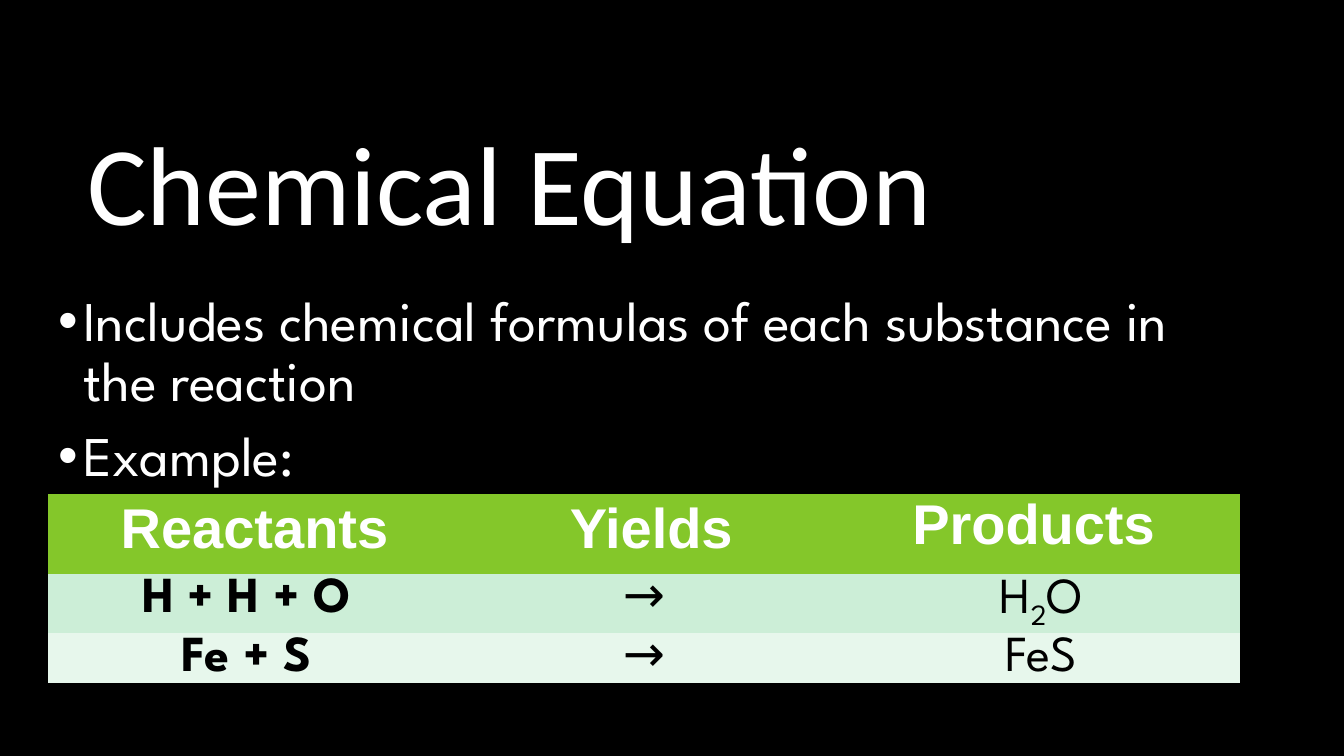
from dataclasses import dataclass
from lxml.etree import SubElement
from pptx import Presentation
from pptx.dml.color import RGBColor
from pptx.enum.text import MSO_ANCHOR, MSO_AUTO_SIZE, PP_ALIGN
from pptx.oxml.ns import qn
from pptx.util import Pt

SCALE = 914400 / 100.8


@dataclass(frozen=True)
class Theme:
    back: str = "000000"
    light: str = "FFFFFF"
    dark: str = "000000"
    head: str = "84C72A"
    bands: tuple = ("CCEED7", "E7F7EC")
    title: int = 80
    large: int = 40
    cell: int = 36
    plain: str = "Calibri"
    strong: str = "Arial"
    round: str = "League Spartan"


THEME = Theme()
HEADS = ("\u00a0Reactants".replace("\u00a0", " "), " Yields", "Products ")
ROWS = (
    (("H + H + O",), ("→",), ("H", "2", "O")),
    (("Fe + S",), ("→",), ("FeS",)),
)
POINTS = (
    "Includes chemical formulas of each substance in the reaction",
    "Example:",
)


def px(size):
    return round(size * SCALE)


def apply(item, values):
    for name, value in values.items():
        setattr(item, name, value)


def paint(fill, color):
    fill.solid()
    fill.fore_color.rgb = RGBColor.from_string(color)


def style(font, face, size, color, bold=False):
    apply(font, {"name": face, "size": Pt(size), "bold": bold})
    font.color.rgb = RGBColor.from_string(color)


def place(shape, left, top, width, height):
    box = {"left": left, "top": top, "width": width, "height": height}
    apply(shape, {name: px(size) for name, size in box.items()})
    apply(shape.text_frame, {
        "word_wrap": True,
        "auto_size": MSO_AUTO_SIZE.NONE,
        "vertical_anchor": MSO_ANCHOR.TOP,
    })


def add_title(shape, text):
    place(shape, 77, 124, 1182, 116)
    para = shape.text_frame.paragraphs[0]
    apply(para, {"alignment": PP_ALIGN.LEFT, "line_spacing": 0.9})
    run = para.add_run()
    run.text = text
    style(run.font, THEME.plain, THEME.title, THEME.light)


def add_list(shape, points):
    place(shape, 48, 288, 1212, 227)
    frame = shape.text_frame
    for index, text in enumerate(points):
        para = frame.add_paragraph() if index else frame.paragraphs[0]
        apply(para, {
            "line_spacing": 0.9,
            "space_before": Pt(10 if index else 0),
        })
        props = para._p.get_or_add_pPr()
        props.set("marL", str(px(25)))
        props.set("indent", str(-px(25)))
        SubElement(props, qn("a:buFont"), typeface="Arial")
        SubElement(props, qn("a:buChar"), char="•")
        run = para.add_run()
        run.text = text
        style(run.font, THEME.round, THEME.large, THEME.light)


def fill_cell(cell, parts, color, look, spacing=1.07):
    paint(cell.fill, color)
    apply(cell, {
        "margin_left": px(7),
        "margin_right": px(7),
        "margin_top": 0,
        "margin_bottom": 0,
    })
    para = cell.text_frame.paragraphs[0]
    apply(para, {"alignment": PP_ALIGN.CENTER, "line_spacing": spacing})
    for part in parts:
        run = para.add_run()
        run.text = part
        style(run.font, *look)
        if part.isdigit():
            run._r.get_or_add_rPr().set("baseline", "-25000")


def add_grid(slide):
    sizes = (80, 59, 49)
    frame = slide.shapes.add_table(
        len(sizes), len(HEADS), px(48), px(494), px(1192), px(sum(sizes)))
    table = frame.table
    plain = "{2D5ABB26-0587-4C30-8999-92F81FD0307C}"
    table._tbl.tblPr.find(qn("a:tableStyleId")).text = plain
    for row, size in zip(table.rows, sizes):
        row.height = px(size)
    look = (THEME.strong, THEME.large, THEME.light, True)
    for col, text in enumerate(HEADS):
        spacing = 1.0 if col == 2 else 1.07
        fill_cell(table.cell(0, col), (text,), THEME.head, look, spacing)
    for row, (cells, color) in enumerate(zip(ROWS, THEME.bands), 1):
        for col, parts in enumerate(cells):
            look = (THEME.round, THEME.cell, THEME.dark, col == 0)
            fill_cell(table.cell(row, col), parts, color, look)


def main():
    deck = Presentation()
    apply(deck, {"slide_width": px(1344), "slide_height": px(756)})
    slide = deck.slides.add_slide(deck.slide_layouts[1])
    paint(slide.background.fill, THEME.back)
    add_title(slide.shapes.title, "Chemical Equation")
    add_list(slide.placeholders[1], POINTS)
    add_grid(slide)
    deck.save("out.pptx")


if __name__ == "__main__":
    main()
